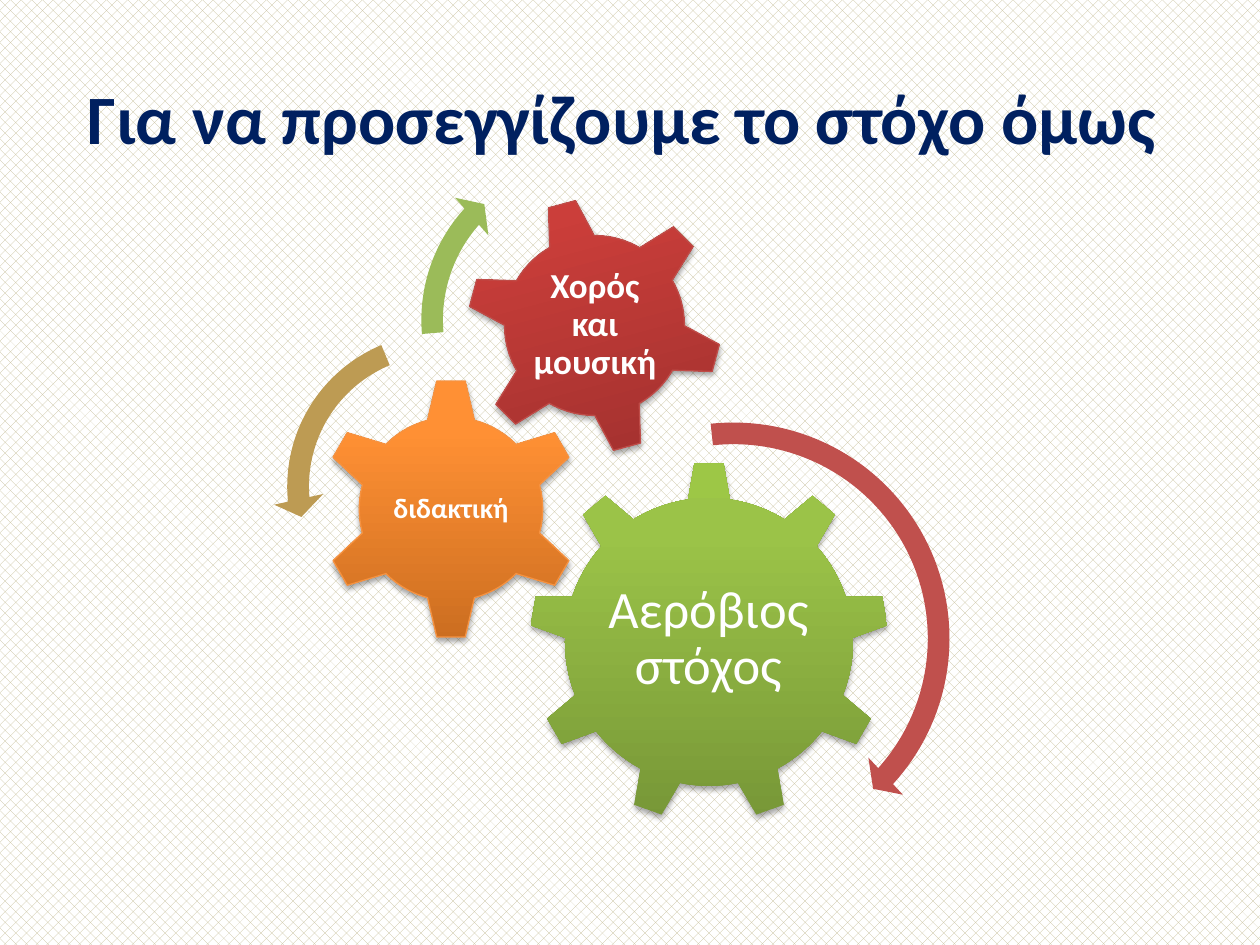
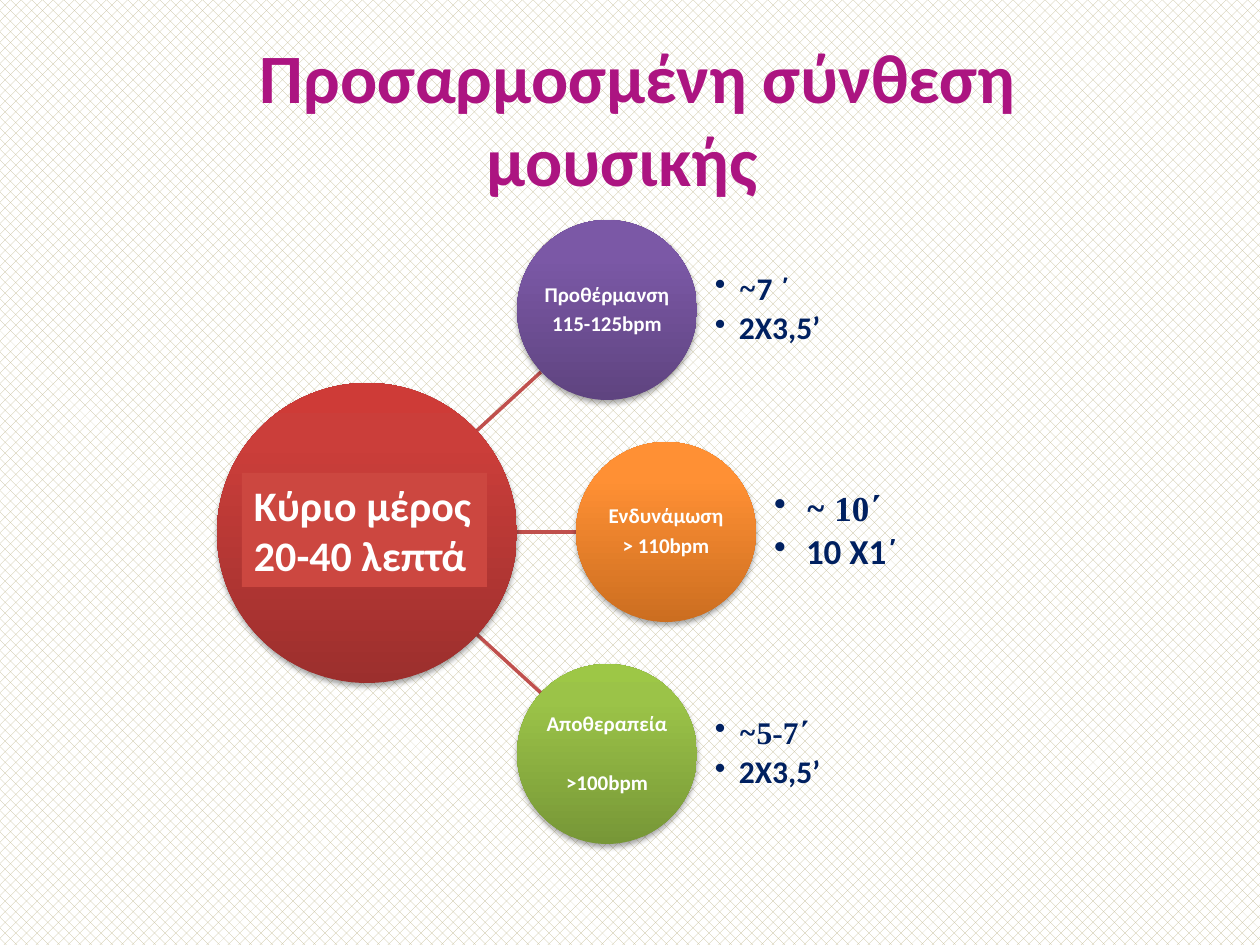
from pptx import Presentation
from pptx.dml.color import RGBColor
from pptx.enum.dml import MSO_PATTERN
from pptx.enum.shapes import MSO_CONNECTOR, MSO_SHAPE
from pptx.enum.text import MSO_ANCHOR, MSO_AUTO_SIZE, PP_ALIGN
from pptx.oxml import parse_xml
from pptx.oxml.ns import nsdecls
from pptx.oxml.xmlchemy import OxmlElement
from pptx.util import Pt

PX = 7257
FONT = "Calibri"
SERIF = "Times New Roman"
WHITE = "FFFFFF"
NAVY = "002060"
MAGENTA = "AC1481"
BRICK = "C0504D"
GREEN = ("779737", "9BC348", "9DC746")
ORANGE = ("CC6E20", "FF9034", "FF9136")
RED = ("9C2F2D", "CB3E3A", "CE3B37")
PURPLE = ("5F4480", "7B58A6", "7C57A8")
color = RGBColor.from_string


def write(frame, lines, size, ink, bold=True, align=PP_ALIGN.CENTER, inset=4,
          spacing=0.9, after=0, indent=0):
    frame.word_wrap = True
    frame.vertical_anchor = MSO_ANCHOR.MIDDLE
    frame.margin_left = frame.margin_right = inset * PX
    frame.margin_top = frame.margin_bottom = inset * PX
    for number, spans in enumerate(lines):
        para = frame.add_paragraph() if number else frame.paragraphs[0]
        para.alignment = align
        para.line_spacing = spacing
        para.space_after = Pt(after)
        if indent:
            settings = para._p.get_or_add_pPr()
            settings.set("marL", str(indent * PX))
            settings.set("indent", str(-indent * PX))
            bullet = OxmlElement("a:buChar")
            bullet.set("char", "•")
            settings.append(bullet)
        for text, face in spans:
            span = para.add_run()
            span.text = text
            span.font.name = face
            span.font.size = Pt(size)
            span.font.bold = bold
            span.font.color.rgb = color(ink)


def shade(shape, stops, edge=None):
    marks = "".join(
        f'<a:gs pos="{place * 1000}"><a:srgbClr val="{tone}"/></a:gs>'
        for place, tone in zip((0, 80, 100), stops))
    properties = shape._element.spPr
    properties.append(parse_xml(
        f'<a:gradFill {nsdecls("a")} rotWithShape="1"><a:gsLst>{marks}</a:gsLst>'
        '<a:lin ang="16200000" scaled="0"/></a:gradFill>'))
    if edge:
        shape.line.color.rgb = color(edge)
        shape.line.width = Pt(0.75)
    else:
        shape.line.fill.background()
    properties.append(parse_xml(
        f'<a:effectLst {nsdecls("a")}><a:outerShdw blurRad="40000" dist="23000" '
        'dir="5400000" rotWithShape="0"><a:srgbClr val="000000">'
        '<a:alpha val="35000"/></a:srgbClr></a:outerShdw></a:effectLst>'))


deck = Presentation()
deck.slide_width = 1260 * PX
deck.slide_height = 945 * PX
backdrop = deck.slide_master.background.fill
backdrop.patterned()
backdrop.pattern = MSO_PATTERN.from_xml("pct40")
backdrop.fore_color.rgb = color("C4BD97")
backdrop.back_color.rgb = color(WHITE)

pages = []
titles = [
    (["Για να προσεγγίζουμε το στόχο όμως "], NAVY),
    ([" Προσαρμοσμένη σύνθεση", "μουσικής "], MAGENTA),
]
for title_lines, ink in titles:
    page = deck.slides.add_slide(deck.slide_layouts[5])
    title = page.shapes.title
    title.left, title.top, title.width, title.height = [
        length * PX for length in (63, 38, 1134, 158)]
    title.text_frame.auto_size = MSO_AUTO_SIZE.NONE
    write(title.text_frame, [[(line, FONT)] for line in title_lines],
          39.6, ink, inset=6, spacing=1.0)
    pages.append(page)
gear_page, music_page = pages

gears = [
    (MSO_SHAPE.GEAR_9, (529, 462, 360), 0, GREEN, None,
     "Αερόβιος στόχος", (601, 547, 215, 185), 30, False),
    (MSO_SHAPE.GEAR_6, (320, 378, 262), 0, ORANGE, "F69240",
     "διδακτική", (386, 444, 130, 130), 16, True),
    (MSO_SHAPE.GEAR_6, (466, 197, 257), 345, RED, "BF4C48",
     "Χορός και μουσική", (523, 253, 144, 144), 20, True),
]
for kind, (left, top, side), turn, stops, edge, label, area, size, bold in gears:
    gear = gear_page.shapes.add_shape(kind, left * PX, top * PX, side * PX, side * PX)
    gear.rotation = turn
    shade(gear, stops, edge)
    box = gear_page.shapes.add_textbox(*[length * PX for length in area])
    write(box.text_frame, [[(label, FONT)]], size, WHITE, bold)

arrows = [
    (MSO_SHAPE.CIRCULAR_ARROW, (503, 408, 461), BRICK,
     4.7, (4.98, 42.13, 263.93), 5.5),
    (MSO_SHAPE.LEFT_CIRCULAR_ARROW, (273, 319, 335), "BD9B53",
     6.5, (7.17, 174.82, 247.3), 7.5),
    (MSO_SHAPE.CIRCULAR_ARROW, (407, 140, 360), "9BBB59",
     6, (6.57, 221.9, 175.14), 7),
]
for kind, (left, top, side), tone, band, angles, head in arrows:
    arrow = gear_page.shapes.add_shape(kind, left * PX, top * PX, side * PX, side * PX)
    arrow.adjustments[0] = band / 100
    for number, angle in enumerate(angles, 1):
        arrow.adjustments[number] = angle * 0.6
    arrow.adjustments[4] = head / 100
    arrow.fill.solid()
    arrow.fill.fore_color.rgb = color(tone)
    arrow.line.fill.background()
    arrow.shadow.inherit = False

for start, end in [((471, 629), (541, 693)), ((471, 532), (576, 532)),
                   ((471, 436), (541, 372))]:
    spoke = music_page.shapes.add_connector(
        MSO_CONNECTOR.STRAIGHT, *[length * PX for length in start + end])
    spoke.line.color.rgb = color(BRICK)
    spoke.line.width = Pt(2)
    spoke._element.spPr.append(OxmlElement("a:effectLst"))

hub = music_page.shapes.add_shape(
    MSO_SHAPE.OVAL, 217 * PX, 383 * PX, 300 * PX, 300 * PX)
shade(hub, RED)

phases = [
    (517, PURPLE, ["Προθέρμανση", "115-125bpm"], 0,
     [[("⁓", SERIF), ("7 ΄", FONT)], [("2Χ3,5’", FONT)]], 18, 24),
    (576, ORANGE, ["Ενδυνάμωση", "> 110bpm"], 0,
     [[("⁓ 10΄", SERIF)], [("10 Χ1΄", FONT)]], 20, 32),
    (517, GREEN, ["Αποθεραπεία", ">100bpm"], 17,
     [[("⁓5-7΄", SERIF)], [("2Χ3,5’", FONT)]], 18, 24),
]
for row, (left, stops, label, gap, details, size, indent) in enumerate(phases):
    top = 220 + 222 * row
    phase = music_page.shapes.add_shape(
        MSO_SHAPE.OVAL, left * PX, top * PX, 180 * PX, 180 * PX)
    shade(phase, stops)
    write(phase.text_frame, [[(line, FONT)] for line in label], 12, WHITE,
          inset=1, after=4)
    phase.text_frame.paragraphs[1].space_before = Pt(gap)
    box = music_page.shapes.add_textbox(
        (left + 198) * PX, top * PX, 270 * PX, 180 * PX)
    write(box.text_frame, details, size, NAVY, align=PP_ALIGN.LEFT,
          inset=0, after=3, indent=indent)

main_part = music_page.shapes.add_shape(
    MSO_SHAPE.RECTANGLE, 242 * PX, 473 * PX, 245 * PX, 114 * PX)
main_part.fill.solid()
main_part.fill.fore_color.rgb = color("CC4740")
main_part.line.fill.background()
main_part.shadow.inherit = False
write(main_part.text_frame, [[("Κύριο μέρος", FONT)], [("20-40 λεπτά", FONT)]],
      24, WHITE, align=PP_ALIGN.LEFT, inset=12, spacing=1.0)
main_part.text_frame.margin_top = main_part.text_frame.margin_bottom = 6 * PX
main_part.text_frame.word_wrap = False

deck.save("out.pptx")
